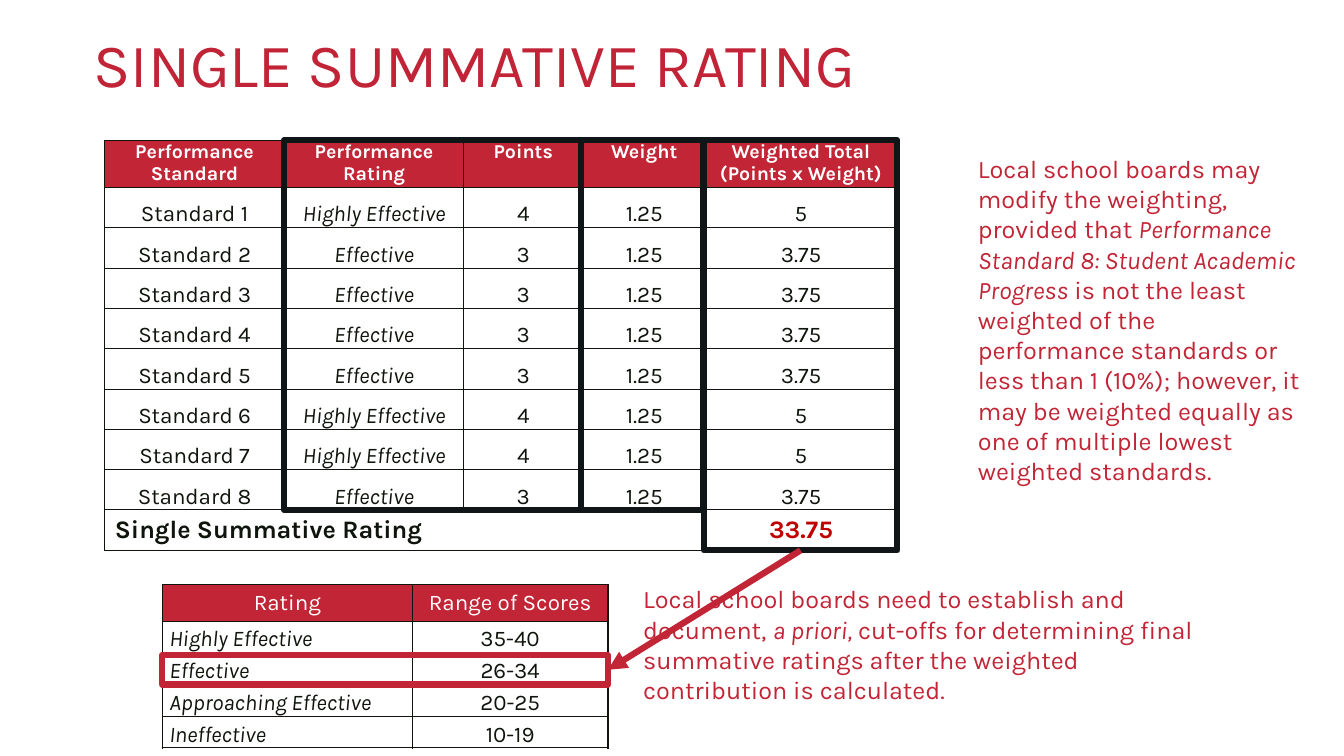
from lxml import etree
from pptx import Presentation
from pptx.dml.color import RGBColor
from pptx.enum.shapes import MSO_CONNECTOR, MSO_SHAPE
from pptx.enum.text import MSO_ANCHOR, PP_ALIGN
from pptx.oxml.ns import qn
from pptx.util import Inches, Pt

FONT = "Karla"
RED, TITLE_RED, SCORE_RED = "C22536", "C12436", "C00000"
INK, FRAME, WHITE = "0F150D", "101517", "FFFFFF"
LEFT, CENTER = PP_ALIGN.LEFT, PP_ALIGN.CENTER
TOP, MIDDLE, BOTTOM = MSO_ANCHOR.TOP, MSO_ANCHOR.MIDDLE, MSO_ANCHOR.BOTTOM
RECTANGLE, STRAIGHT = MSO_SHAPE.RECTANGLE, MSO_CONNECTOR.STRAIGHT
BOTTOM_SITE, RIGHT_SITE = 2, 3

WEIGHT = 1.25
RATING_POINTS = {"Highly Effective": 4, "Effective": 3}
STANDARD_RATINGS = ["Highly Effective", "Effective", "Effective", "Effective",
                    "Effective", "Highly Effective", "Highly Effective", "Effective"]
STANDARD_HEADERS = ["Performance Standard", "Performance Rating", "Points", "Weight",
                    "Weighted Total\n(Points x Weight)"]
SCORE_ROWS = [("Rating", "Range of Scores"), ("Highly Effective", "35-40"),
              ("Effective", "26-34"), ("Approaching Effective", "20-25"),
              ("Ineffective", "10-19")]


def rgb(value):
    """Return the colour for a hex string."""
    return RGBColor.from_string(value)


def style_font(paragraph, size, color, bold=False, italic=False):
    """Set the font of a whole paragraph."""
    font = paragraph.font
    font.name, font.size, font.bold, font.italic = FONT, Pt(size), bold, italic
    font.color.rgb = rgb(color)


def add_text(slide, box, runs, size, color, anchor=TOP, line_spacing=None):
    """Add a wrapping text box from (text, italic) runs."""
    shape = slide.shapes.add_textbox(*map(Inches, box))
    frame = shape.text_frame
    frame.word_wrap = True
    frame.vertical_anchor = anchor
    paragraph = frame.paragraphs[0]
    paragraph.line_spacing = line_spacing
    style_font(paragraph, size, color)
    for text, italic in runs:
        run = paragraph.add_run()
        run.text = text
        if italic:
            run.font.italic = True


def set_borders(cell, widths):
    """Draw the left, right, top and bottom borders of a cell."""
    properties = cell._tc.get_or_add_tcPr()
    for side, width in zip("LRTB", widths):
        line = etree.SubElement(properties, qn(f"a:ln{side}"), w=str(Pt(width)))
        fill = etree.SubElement(line, qn("a:solidFill"))
        etree.SubElement(fill, qn("a:srgbClr"), val=INK)


def add_grid(slide, left, top, columns, rows):
    """Add an unfilled table with a heavier outer border and a red header."""
    table = slide.shapes.add_table(
        len(rows), len(columns), Inches(left), Inches(top),
        Inches(sum(columns)), Inches(sum(rows))).table
    table.first_row = table.horz_banding = False
    for column, width in zip(table.columns, columns):
        column.width = Inches(width)
    for row, height in zip(table.rows, rows):
        row.height = Inches(height)
    last_row, last_column = len(rows) - 1, len(columns) - 1
    for r in range(len(rows)):
        for c in range(len(columns)):
            cell = table.cell(r, c)
            outer = (c == 0, c == last_column, r == 0, r == last_row)
            set_borders(cell, [1 if edge else 0.5 for edge in outer])
            if r == 0:
                cell.fill.solid()
                cell.fill.fore_color.rgb = rgb(RED)
            else:
                cell.fill.background()
    return table


def write_cell(cell, text, size=16, color=INK, bold=False, italic=False,
               align=CENTER, anchor=BOTTOM, side=0.07, edge=0):
    """Write and format the text of a table cell."""
    cell.text = text
    cell.vertical_anchor = anchor
    cell.margin_left = cell.margin_right = Inches(side)
    cell.margin_top = cell.margin_bottom = Inches(edge)
    for paragraph in cell.text_frame.paragraphs:
        paragraph.alignment = align
        style_font(paragraph, size, color, bold, italic)


def add_standards_table(slide):
    """Add the weighted points of the eight standards and their total."""
    table = add_grid(slide, 1.04, 1.39, [1.78, 1.78, 1.18, 1.22, 1.89], [0.46] + [0.4] * 9)
    for c, header in enumerate(STANDARD_HEADERS):
        write_cell(table.cell(0, c), header, 14, WHITE, bold=True, anchor=TOP)
    total = 0
    for r, rating in enumerate(STANDARD_RATINGS, 1):
        points = RATING_POINTS[rating]
        weighted = points * WEIGHT
        total += weighted
        values = (f"Standard {r}", rating, str(points), str(WEIGHT), f"{weighted:g}")
        for c, value in enumerate(values):
            write_cell(table.cell(r, c), value, italic=c == 1)
    table.cell(9, 0).merge(table.cell(9, 3))
    write_cell(table.cell(9, 0), "Single Summative Rating", 18, bold=True,
               align=LEFT, side=0.1, edge=0.05)
    write_cell(table.cell(9, 4), f"{total:g}", 18, SCORE_RED, bold=True,
               anchor=MIDDLE, side=0.1, edge=0.05)


def add_scores_table(slide):
    """Add the range of scores for each rating."""
    table = add_grid(slide, 1.61, 5.8, [2.48, 1.94], [0.36] + [1.26 / 4] * 4)
    for r, values in enumerate(SCORE_ROWS):
        for c, value in enumerate(values):
            cell = table.cell(r, c)
            if r == 0:
                write_cell(cell, value, color=WHITE, anchor=MIDDLE)
            else:
                write_cell(cell, value, italic=c == 0, align=CENTER if c else LEFT)


def add_frame(slide, box, color):
    """Add an unfilled rectangle with a heavy outline."""
    shape = slide.shapes.add_shape(RECTANGLE, *map(Inches, box))
    shape.shadow.inherit = False
    shape.fill.background()
    shape.line.color.rgb = rgb(color)
    shape.line.width = Pt(4.5)
    return shape


def add_arrow(slide, source, target):
    """Add a red arrow from the bottom of one frame to the right of another."""
    arrow = slide.shapes.add_connector(STRAIGHT, 0, 0, 0, 0)
    arrow.begin_connect(source, BOTTOM_SITE)
    arrow.end_connect(target, RIGHT_SITE)
    arrow.line.color.rgb = rgb(RED)
    arrow.line.width = Pt(4.5)
    etree.SubElement(arrow.line._get_or_add_ln(), qn("a:tailEnd"), type="triangle")
    etree.SubElement(arrow._element.spPr, qn("a:effectLst"))


def main():
    """Build the slide and save it."""
    presentation = Presentation()
    presentation.slide_width, presentation.slide_height = Inches(13.33), Inches(7.5)
    slide = presentation.slides.add_slide(presentation.slide_layouts[6])
    add_text(slide, (0.83, -0.06, 11.5, 1.45), [("SINGLE SUMMATIVE RATING", False)],
             44, TITLE_RED, MIDDLE, 0.9)
    add_standards_table(slide)
    add_text(slide, (9.6, 1.47, 3.43, 3.43), [
        ("Local school boards may modify the weighting, provided that ", False),
        ("Performance Standard 8: Student Academic Progress", True),
        (" is not the least weighted of the performance standards or less than 1 (10%); "
         "however, it may be weighted equally as one of multiple lowest weighted "
         "standards.", False)], 18, RED)
    add_scores_table(slide)
    add_text(slide, (6.28, 5.74, 5.69, 1.31), [
        ("Local school boards need to establish and document, ", False),
        ("a priori,", True),
        (" cut-offs for determining final summative ratings after the weighted "
         "contribution is calculated.", False)], 18, RED)
    add_frame(slide, (2.82, 1.39, 2.94, 3.67), FRAME)
    add_frame(slide, (5.76, 1.39, 1.21, 3.67), FRAME)
    total_frame = add_frame(slide, (6.98, 1.39, 1.92, 4.07), FRAME)
    effective_frame = add_frame(slide, (1.61, 6.5, 4.42, 0.29), RED)
    add_arrow(slide, total_frame, effective_frame)
    presentation.save("out.pptx")


if __name__ == "__main__":
    main()
